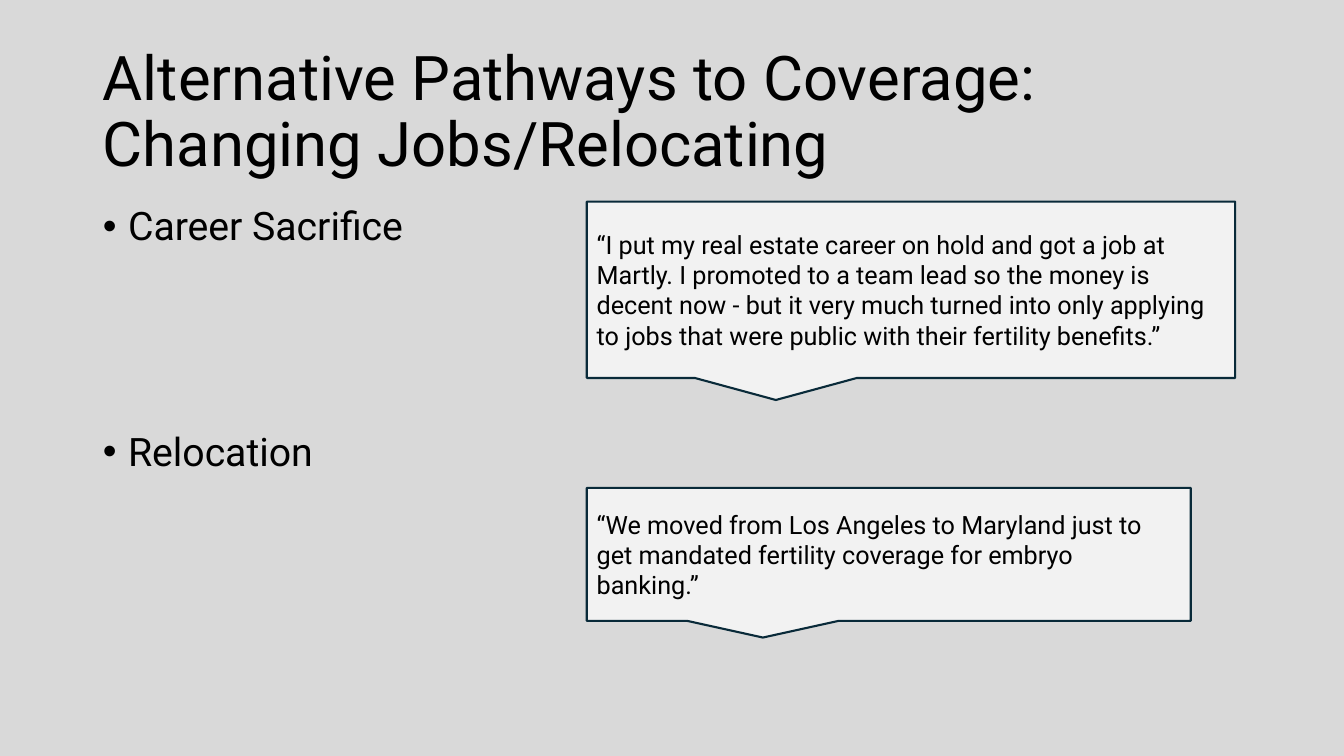
import dataclasses

import lxml.etree
import pptx
import pptx.dml.color
import pptx.enum.shapes
import pptx.enum.text
import pptx.oxml.ns
import pptx.util


@dataclasses.dataclass(frozen=True)
class Theme:
    font: str = "Roboto"
    background: str = "D9D9D9"
    ink: str = "000000"
    callout_fill: str = "F2F2F2"
    callout_line: str = "092A39"
    title_size: int = 44
    body_size: int = 28
    quote_size: int = 18
    line_width: float = 1.5
    line_spacing: float = 0.9


THEME = Theme()
SLIDE_WIDTH = pptx.util.Inches(13.33)
SLIDE_HEIGHT = pptx.util.Inches(7.5)
MARGIN = 6.9
CONTENT_WIDTH = 86.25
CONTENT_TOP = 26.67
QUOTE_LEFT = 43.66
TOPIC_GAP = 131
BULLET_INDENT = pptx.util.Inches(0.25)

TITLE = "Alternative Pathways to Coverage: Changing Jobs/Relocating"
TOPICS = ["Career Sacrifice", "Relocation"]
QUOTES = [
    (CONTENT_TOP, 48.24, 23.33,
     "“I put my real estate career on hold and got a job at Martly. "
     "I promoted to a team lead so the money is decent now - but it very much "
     "turned into only applying to jobs that were public with their fertility benefits.”"),
    (64.53, 44.94, 17.6,
     "“We moved from Los Angeles to Maryland just to get mandated fertility "
     "coverage for embryo banking.”"),
]


def color(value):
    return pptx.dml.color.RGBColor.from_string(value)


def area(left, top, width, height):
    return (
        round(SLIDE_WIDTH * left / 100),
        round(SLIDE_HEIGHT * top / 100),
        round(SLIDE_WIDTH * width / 100),
        round(SLIDE_HEIGHT * height / 100),
    )


def place(box, *shares):
    box.left, box.top, box.width, box.height = area(*shares)


def prepare_frame(box, anchor):
    frame = box.text_frame
    frame.word_wrap = True
    frame.auto_size = pptx.enum.text.MSO_AUTO_SIZE.NONE
    frame.vertical_anchor = anchor
    return frame


def write(para, text, size):
    para.alignment = pptx.enum.text.PP_ALIGN.LEFT
    span = para.add_run()
    span.text = text
    span.font.name = THEME.font
    span.font.size = pptx.util.Pt(size)
    span.font.color.rgb = color(THEME.ink)


def add_bullet(para):
    properties = para._p.get_or_add_pPr()
    properties.set("marL", str(BULLET_INDENT))
    properties.set("indent", str(-BULLET_INDENT))
    for tag, name, value in (("a:buFont", "typeface", "Arial"), ("a:buChar", "char", "•")):
        bullet = lxml.etree.SubElement(properties, pptx.oxml.ns.qn(tag))
        bullet.set(name, value)


def fill_title(page):
    box = page.shapes.title
    place(box, MARGIN, 5.33, CONTENT_WIDTH, 19.33)
    frame = prepare_frame(box, pptx.enum.text.MSO_ANCHOR.MIDDLE)
    para = frame.paragraphs[0]
    para.line_spacing = THEME.line_spacing
    write(para, TITLE, THEME.title_size)


def fill_topics(page):
    box = page.placeholders[1]
    place(box, MARGIN, CONTENT_TOP, CONTENT_WIDTH, 63.47)
    frame = prepare_frame(box, pptx.enum.text.MSO_ANCHOR.TOP)
    for index, topic in enumerate(TOPICS):
        para = frame.add_paragraph() if index else frame.paragraphs[0]
        add_bullet(para)
        para.line_spacing = THEME.line_spacing
        para.space_before = pptx.util.Pt(TOPIC_GAP if index else 0)
        write(para, topic, THEME.body_size)


def add_quote(page, top, width, height, text):
    box = page.shapes.add_shape(
        pptx.enum.shapes.MSO_SHAPE.RECTANGULAR_CALLOUT,
        *area(QUOTE_LEFT, top, width, height),
    )
    box.shadow.inherit = False
    box.fill.solid()
    box.fill.fore_color.rgb = color(THEME.callout_fill)
    box.line.color.rgb = color(THEME.callout_line)
    box.line.width = pptx.util.Pt(THEME.line_width)
    frame = prepare_frame(box, pptx.enum.text.MSO_ANCHOR.MIDDLE)
    write(frame.paragraphs[0], text, THEME.quote_size)


def main():
    deck = pptx.Presentation()
    deck.slide_width = SLIDE_WIDTH
    deck.slide_height = SLIDE_HEIGHT
    page = deck.slides.add_slide(deck.slide_layouts[1])
    page.background.fill.solid()
    page.background.fill.fore_color.rgb = color(THEME.background)
    fill_title(page)
    fill_topics(page)
    for quote in QUOTES:
        add_quote(page, *quote)
    deck.save("out.pptx")


if __name__ == "__main__":
    main()
